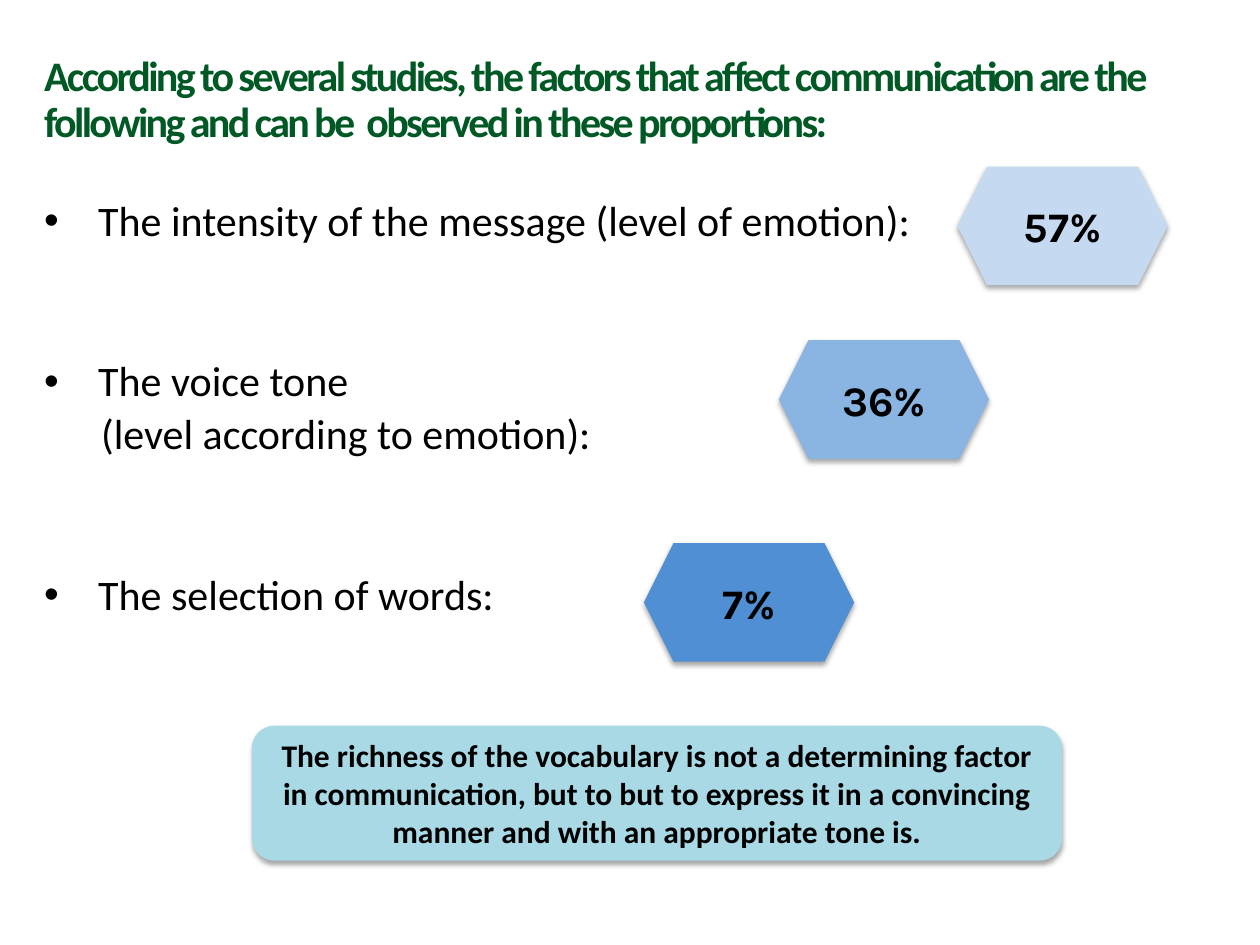
from dataclasses import dataclass

import pptx
import pptx.dml.color
import pptx.enum.shapes
import pptx.enum.text
import pptx.oxml
import pptx.oxml.ns
import pptx.util
from pptx.util import Cm, Pt

Align = pptx.enum.text.PP_ALIGN
Anchor = pptx.enum.text.MSO_ANCHOR
ShapeType = pptx.enum.shapes.MSO_SHAPE

BLACK = "000000"
GREEN = "005825"
TEXT_LEFT, TEXT_WIDTH = Cm(0.89), Cm(23.29)
BULLET_INDENT = Cm(1.09)
CONTINUATION_INDENT = Cm(1.15)
LINE_GAP = Pt(4.3)
FACTOR_GAP = Pt(65.7)


@dataclass
class Line:
    text: str
    bullet: bool
    space_before: int


@dataclass
class Panel:
    kind: int
    left: float
    top: float
    width: float
    height: float
    fill: str
    text: str
    font: str
    size: int


def hexagon(left: float, top: float, fill: str, text: str) -> Panel:
    return Panel(ShapeType.HEXAGON, left, top, 4.24, 2.39, fill, text, "Karla", 24)


FACTORS = [
    Line("The intensity of the message (level of emotion):", True, Pt(0)),
    Line("The voice tone", True, FACTOR_GAP),
    Line("(level according to emotion):", False, LINE_GAP),
    Line("The selection of words:", True, FACTOR_GAP),
]

PANELS = [
    hexagon(19.3, 3.36, "C5DAF1", "57%"),
    hexagon(15.7, 6.86, "8AB4E2", "36%"),
    hexagon(12.98, 10.95, "508FD4", "7%"),
    Panel(ShapeType.ROUNDED_RECTANGLE, 5.08, 14.63, 16.33, 2.72, "A8D9E5",
          "The richness of the vocabulary is not a determining factor in "
          "communication, but to but to express it in a convincing manner "
          "and with an appropriate tone is.", "Calibri", 18),
]


def color(value: str) -> pptx.dml.color.RGBColor:
    return pptx.dml.color.RGBColor.from_string(value)


def add_run(paragraph, text: str, font: str, size: int, fill: str, bold: bool):
    run = paragraph.add_run()
    run.text = text
    run.font.name = font
    run.font.size = Pt(size)
    run.font.bold = bold
    run.font.color.rgb = color(fill)
    return run


def add_text_frame(slide, top: int, height: int):
    frame = slide.shapes.add_textbox(TEXT_LEFT, top, TEXT_WIDTH, height).text_frame
    frame.word_wrap = True
    frame.margin_left = frame.margin_right = 0
    frame.margin_top = frame.margin_bottom = 0
    return frame


def set_indent(paragraph, line: Line) -> None:
    properties = paragraph._p.get_or_add_pPr()
    if line.bullet:
        properties.set("marL", str(BULLET_INDENT))
        properties.set("indent", str(-BULLET_INDENT))
        for tag, name, value in (("buFont", "typeface", "Arial"), ("buChar", "char", "•")):
            element = pptx.oxml.ns.qn(f"a:{tag}")
            properties.append(properties.makeelement(element, {name: value}))
    else:
        properties.set("marL", str(CONTINUATION_INDENT))
        properties.set("indent", "0")


def add_shadow(shape) -> None:
    shape.shadow.inherit = False
    effects = shape._element.spPr.find(pptx.oxml.ns.qn("a:effectLst"))
    effects.append(pptx.oxml.parse_xml(
        f'<a:outerShdw {pptx.oxml.ns.nsdecls("a")} blurRad="{Pt(3.1)}" dist="{Pt(1.8)}" '
        'dir="5400000" rotWithShape="0"><a:srgbClr val="000000">'
        '<a:alpha val="35000"/></a:srgbClr></a:outerShdw>'))


def add_panel(slide, panel: Panel) -> None:
    shape = slide.shapes.add_shape(panel.kind, Cm(panel.left), Cm(panel.top),
                                   Cm(panel.width), Cm(panel.height))
    shape.fill.solid()
    shape.fill.fore_color.rgb = color(panel.fill)
    shape.line.fill.background()
    add_shadow(shape)
    frame = shape.text_frame
    frame.word_wrap = True
    frame.vertical_anchor = Anchor.MIDDLE
    paragraph = frame.paragraphs[0]
    paragraph.alignment = Align.CENTER
    add_run(paragraph, panel.text, panel.font, panel.size, BLACK, True)


def main() -> None:
    presentation = pptx.Presentation()
    presentation.slide_width, presentation.slide_height = Cm(25.4), Cm(19.05)
    slide = presentation.slides.add_slide(presentation.slide_layouts[6])

    # Factors, one bullet each
    frame = add_text_frame(slide, Cm(4.04), Cm(13.33))
    for index, line in enumerate(FACTORS):
        paragraph = frame.paragraphs[0] if index == 0 else frame.add_paragraph()
        paragraph.alignment = Align.JUSTIFY
        paragraph.line_spacing = 0.9
        paragraph.space_before = line.space_before
        set_indent(paragraph, line)
        add_run(paragraph, line.text, "Calibri", 24, BLACK, False)

    # Title with tightened letters
    paragraph = add_text_frame(slide, Cm(1.12), Cm(2.77)).paragraphs[0]
    paragraph.line_spacing = 0.9
    title = add_run(
        paragraph,
        "According to several studies, the factors that affect communication "
        "are the following and can be  observed in these proportions:",
        "Calibri", 24, GREEN, True)
    title._r.get_or_add_rPr().set("spc", "-150")

    # Proportions and conclusion
    for panel in PANELS:
        add_panel(slide, panel)

    presentation.save("out.pptx")


if __name__ == "__main__":
    main()
